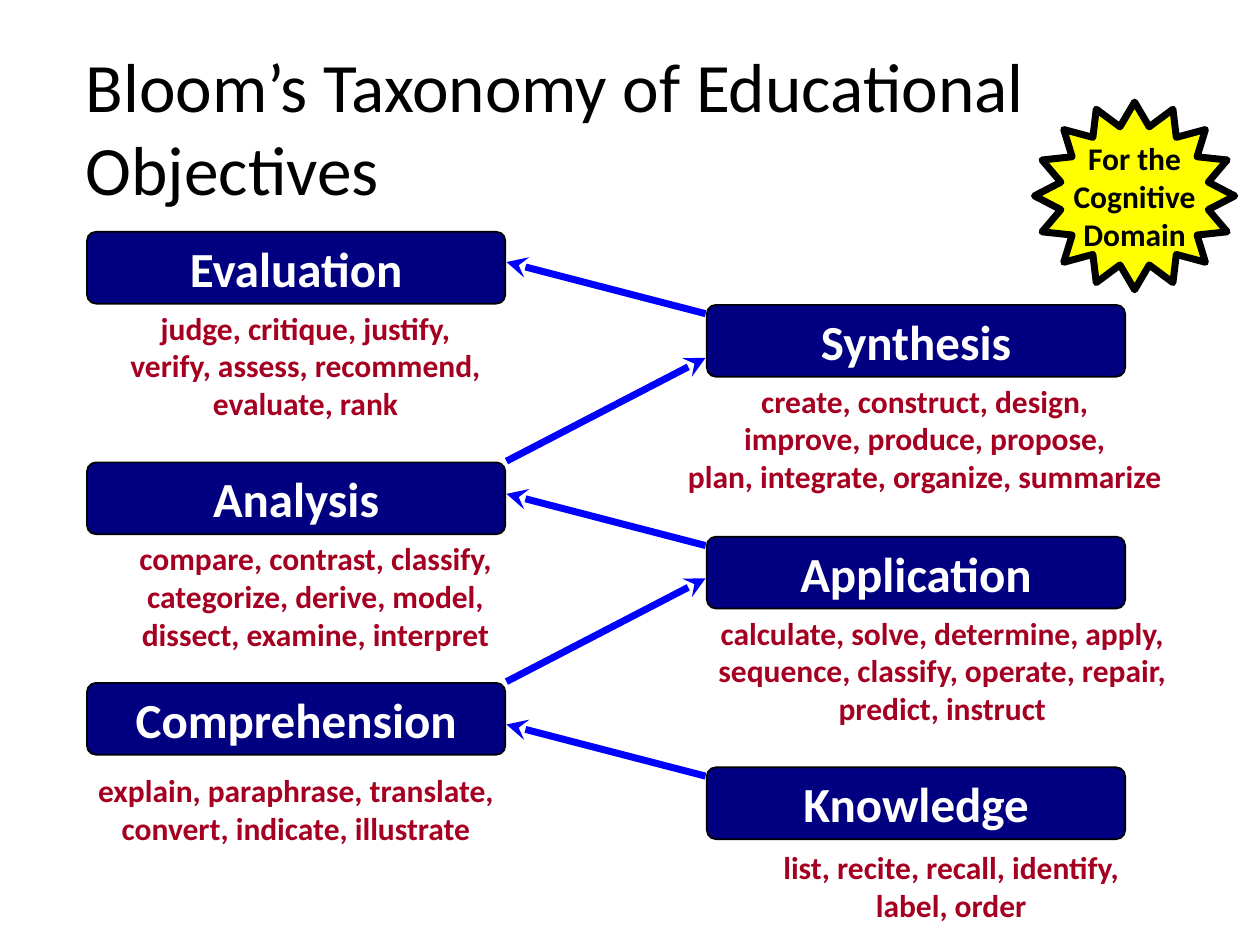
from pptx import Presentation
from pptx.dml.color import RGBColor
from pptx.enum.shapes import MSO_CONNECTOR as Link, MSO_SHAPE as Kind
from pptx.enum.text import MSO_ANCHOR as Anchor, MSO_AUTO_SIZE as Fit, PP_ALIGN as Align
from pptx.oxml.ns import qn
from pptx.util import Inches, Pt
from lxml.etree import SubElement

TITLE = "Bloom’s Taxonomy of Educational Objectives"
BADGE = ["For the", "Cognitive", "Domain"]
LEVELS = [
    ("Knowledge", 6.09, (5.5, 6.68, 4.1, 0.71),
     ["list, recite, recall, identify,", "label, order"]),
    ("Comprehension", 5.42, (0.43, 6.07, 3.84, 0.71),
     ["explain, paraphrase, translate,", "convert, indicate, illustrate"]),
    ("Application", 4.26, (5.36, 4.82, 4.24, 1.01),
     ["calculate, solve, determine, apply, sequence, classify, operate, repair, predict, instruct"]),
    ("Analysis", 3.67, (0.08, 4.23, 4.85, 1.01),
     ["compare, contrast, classify,", "categorize, derive, model,", "dissect, examine, interpret"]),
    ("Synthesis", 2.42, (5.08, 2.98, 4.52, 1.31),
     ["create, construct, design,", "improve, produce, propose,", "plan, integrate, organize, summarize"]),
    ("Evaluation", 1.84, (0, 2.4, 4.85, 1.01),
     ["judge, critique, justify,", "verify, assess, recommend,", "evaluate, rank"]),
]
COLORS = {"box": "000080", "edge": "000000", "arrow": "0000FF", "verbs": "A50021",
          "star": "FFFF00", "dark": "000000", "light": "FFFFFF"}
FONT = "Calibri"
LEFT, RIGHT = 0.69, 5.61
WIDE, HIGH = 3.32, 0.57
GAP = 0.01


def color(name):
    return RGBColor.from_string(COLORS[name])


def write(shape, lines, size, ink, bold=True, align=Align.CENTER, anchor=Anchor.MIDDLE, wrap=True):
    frame = shape.text_frame
    frame.text = "\n".join(lines)
    frame.word_wrap = wrap
    frame.auto_size = Fit.NONE
    frame.vertical_anchor = anchor
    for para in frame.paragraphs:
        para.alignment = align
        for run in para.runs:
            font = run.font
            font.name, font.size, font.bold = FONT, Pt(size), bold
            font.color.rgb = color(ink)


def add_shape(slide, kind, area, adjust, fill, width):
    shape = slide.shapes.add_shape(kind, *map(Inches, area))
    shape.adjustments[0] = adjust
    shape.shadow.inherit = False
    shape.fill.solid()
    shape.fill.fore_color.rgb = color(fill)
    shape.line.color.rgb = color("edge")
    shape.line.width = Pt(width)
    return shape


def add_arrow(slide, start, end):
    arrow = slide.shapes.add_connector(Link.STRAIGHT, *map(Inches, start + end))
    arrow.line.color.rgb = color("arrow")
    arrow.line.width = Pt(4)
    SubElement(arrow.line._get_or_add_ln(), qn("a:tailEnd"), type="stealth")
    SubElement(arrow._element.spPr, qn("a:effectLst"))


def add_level(slide, index, name, top, area, verbs):
    odd = index % 2
    box = add_shape(slide, Kind.ROUNDED_RECTANGLE,
                    (LEFT if odd else RIGHT, top, WIDE, HIGH), 0.125, "box", 1)
    write(box, [name], 28, "light", wrap=False)
    note = slide.shapes.add_textbox(*map(Inches, area))
    write(note, verbs, 18, "verbs", anchor=Anchor.TOP)
    if index < len(LEVELS) - 1:
        near, far = LEFT + WIDE + GAP, RIGHT - GAP
        if odd:
            add_arrow(slide, (near, top - GAP), (far, top - 0.83))
        else:
            add_arrow(slide, (far, top + 0.07), (near, top - 0.34))


def main():
    deck = Presentation()
    deck.slide_width, deck.slide_height = Inches(10), Inches(7.5)
    slide = deck.slides.add_slide(deck.slide_layouts[5])
    title = slide.shapes.title
    title.left, title.top, title.width, title.height = map(Inches, (0.58, 0.46, 8.5, 1.25))
    write(title, [TITLE], 39.6, "dark", False, Align.LEFT, Anchor.BOTTOM)
    for index, level in enumerate(LEVELS):
        add_level(slide, index, *level)
    star = add_shape(slide, Kind.STAR_16_POINT, (8.21, 0.81, 1.59, 1.49), 0.375, "star", 4)
    write(star, BADGE, 18, "dark", wrap=False)
    deck.save("out.pptx")


if __name__ == "__main__":
    main()
